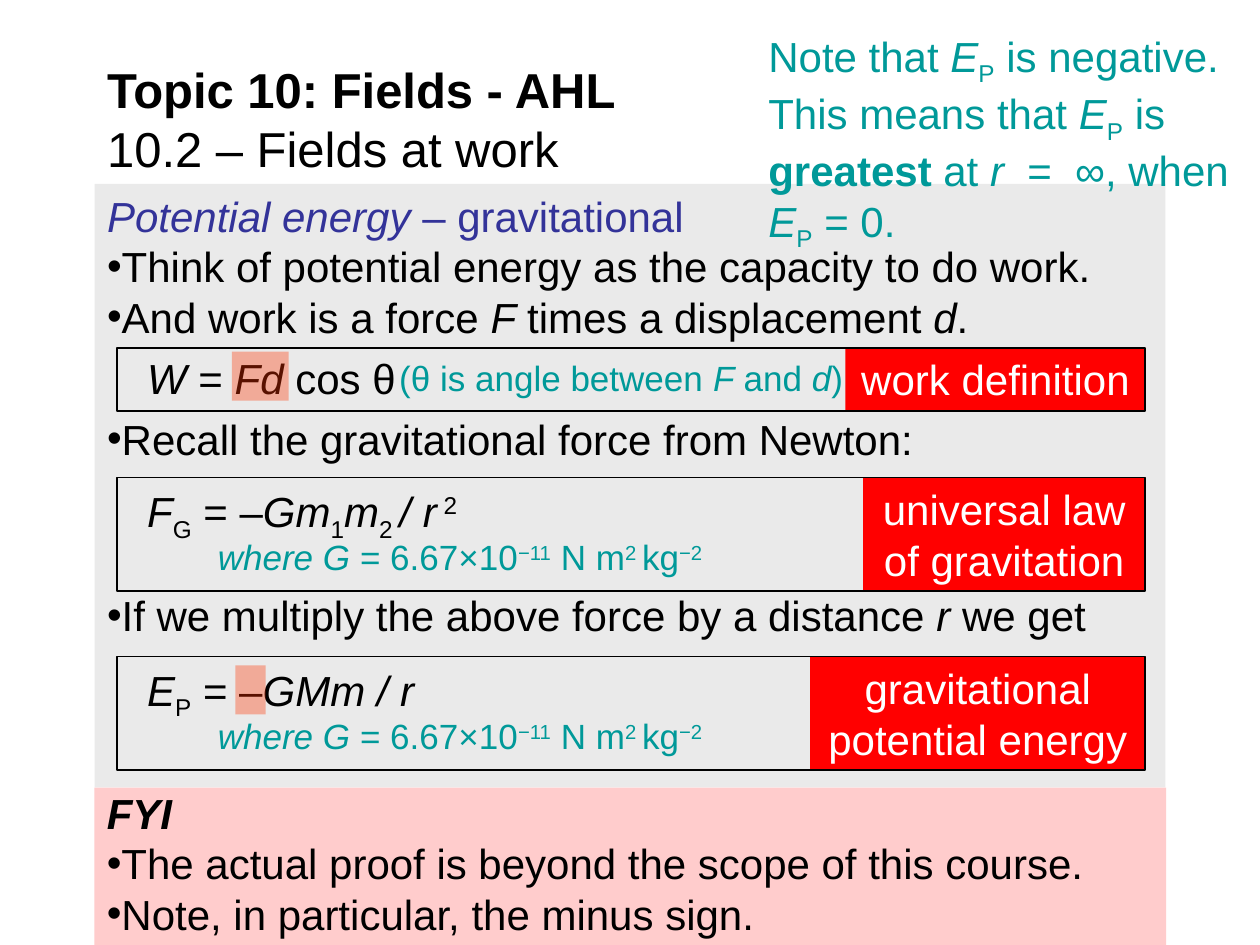
from lxml import etree
from pptx import Presentation
from pptx.dml.color import RGBColor
from pptx.enum.shapes import MSO_SHAPE
from pptx.enum.text import MSO_ANCHOR, MSO_AUTO_SIZE, PP_ALIGN
from pptx.oxml.ns import qn
from pptx.util import Pt

RECT = MSO_SHAPE.RECTANGLE
TOP, MIDDLE = MSO_ANCHOR.TOP, MSO_ANCHOR.MIDDLE
LEFT, CENTER, RIGHT = PP_ALIGN.LEFT, PP_ALIGN.CENTER, PP_ALIGN.RIGHT
NO_FIT = MSO_AUTO_SIZE.NONE

COLORS = {
    "ink": "000000", "heading": "333399", "note": "009999", "white": "FFFFFF",
    "panel": "EAEAEA", "fyi": "FFCCCC", "label": "FF0000", "highlight": "FF3300",
}
BASELINES = {"sub": "-25000", "sup": "30000"}

# A line is a list of (text, style) runs; styles: b, i, bi, sub, sup or "".
TITLE = [[("Topic 10: Fields - AHL", "b"), ("\v", ""), ("10.2 – Fields at work", "")]]
HEADING = [("Potential energy ", "i"), ("– gravitational", "")]
# Each point with the space before it, which makes room for the formula boxes
POINTS = [
    (0, [("Think of potential energy as the capacity to do work.", "")]),
    (0, [("And work is a force ", ""), ("F ", "i"), ("times a displacement ", ""),
         ("d", "i"), (".", "")]),
    (41, [("Recall the gravitational force from Newton:", "")]),
    (72, [("If we multiply the above force by a distance ", ""), ("r", "i"),
          (" we get", "")]),
]
FYI_HEADING = [("FYI", "bi")]
FYI_POINTS = [
    [("The actual proof is beyond the scope of this course.", "")],
    [("Note, in particular, the minus sign.", "")],
]
EP = [("E", "i"), ("P", "sub")]
SIGN_NOTE = [("Note that ", ""), *EP, (" is negative. This means that ", ""), *EP,
             (" is ", ""), ("greatest ", "b"), ("at ", ""), ("r", "i"),
             ("  =  ∞, when ", ""), *EP, (" = 0.", "")]
ANGLE = [("(θ is angle between ", ""), ("F ", "i"), ("and ", ""), ("d", "i"), (")", "")]
CONSTANT = [("where G", "i"), (" = 6.67×10", ""), ("−11", "sup"), (" N m", ""),
            ("2 ", "sup"), ("kg", ""), ("−2", "sup")]
# Remark: runs, left, offset from the frame top, width, alignment
ANGLE_REMARK = (ANGLE, 185.8, 4.3, 303, RIGHT)
CONSTANT_REMARK = (CONSTANT, 117.4, 32.4, 379.4, LEFT)
FORMULAS = [
    dict(top=198.7, height=36, label="work definition", label_width=171.4,
         formula=[("W", "i"), (" = ", ""), ("Fd ", "i"), ("cos θ", "")],
         formula_offset=2.2, remark=ANGLE_REMARK),
    dict(top=272.9, height=64.8, label="universal law of gravitation", label_width=161.3,
         formula=[("F", "i"), ("G", "sub"), (" = –", ""), ("Gm", "i"), ("1", "sub"),
                  ("m", "i"), ("2 ", "sub"), ("/ r", "i"), (" 2", "sup")],
         formula_offset=1.4, remark=CONSTANT_REMARK),
    dict(top=375.1, height=64.8, label="gravitational potential energy", label_width=191.5,
         formula=[*EP, (" = –", ""), ("GMm / r", "i")],
         formula_offset=1.4, remark=CONSTANT_REMARK),
]
HIGHLIGHTS = [(132.5, 200.9, 32.4, 28.1), (134.6, 380.2, 17.3, 28.1)]
FRAME_LEFT, FRAME_WIDTH = 67, 587.5


def rgb(name):
    return RGBColor.from_string(COLORS[name])


def add_runs(paragraph, runs, size, color):
    for text, style in runs:
        if text == "\v":
            paragraph.add_line_break()
            continue
        run = paragraph.add_run()
        run.text = text
        font = run.font
        font.name, font.size, font.color.rgb = "Arial", Pt(size), rgb(color)
        script = BASELINES.get(style)
        font.bold = not script and "b" in style
        font.italic = not script and "i" in style
        if script:
            run._r.get_or_add_rPr().set("baseline", script)


def set_bullet(paragraph, bulleted):
    """Put the bullet, if any, right against the text."""
    props = paragraph._p.get_or_add_pPr()
    props.set("marL", "0")
    props.set("indent", "0")
    if bulleted:
        etree.SubElement(props, qn("a:buFont")).set("typeface", "Arial")
        etree.SubElement(props, qn("a:buChar")).set("char", "•")
    else:
        etree.SubElement(props, qn("a:buNone"))


def write(shape, lines, size=24, color="ink", align=LEFT, anchor=TOP):
    """Fill a shape with lines of runs and return their paragraphs."""
    frame = shape.text_frame
    frame.word_wrap, frame.auto_size, frame.vertical_anchor = True, NO_FIT, anchor
    paragraphs = []
    for index, runs in enumerate(lines):
        paragraph = frame.add_paragraph() if index else frame.paragraphs[0]
        paragraph.alignment, paragraph.line_spacing = align, 1.0
        paragraph.space_before = paragraph.space_after = Pt(0)
        add_runs(paragraph, runs, size, color)
        paragraphs.append(paragraph)
    return paragraphs


def place(shape, left, top, width, height):
    shape.left, shape.top, shape.width, shape.height = map(Pt, (left, top, width, height))


def paint(shape, color):
    shape.fill.solid()
    shape.fill.fore_color.rgb = rgb(color)


def add_rect(slide, box, fill=None):
    rect = slide.shapes.add_shape(RECT, *map(Pt, box))
    rect.shadow.inherit = False
    if fill:
        paint(rect, fill)
        rect.line.fill.background()
    else:
        rect.fill.background()
        rect.line.color.rgb, rect.line.width = rgb("ink"), Pt(1)
    return rect


def add_text(slide, box, runs, size=24, color="ink", align=LEFT):
    return write(slide.shapes.add_textbox(*map(Pt, box)), [runs], size, color, align)[0]


def add_formula(slide, top, height, label, label_width, formula, formula_offset, remark):
    label_left = FRAME_LEFT + FRAME_WIDTH - label_width
    label_box = add_rect(slide, (label_left, top, label_width, height), "label")
    write(label_box, [[(label, "")]], color="white", align=CENTER)
    add_rect(slide, (FRAME_LEFT, top, FRAME_WIDTH, height))
    runs, left, offset, width, align = remark
    for paragraph, size in (
        (add_text(slide, (77, top + formula_offset, 218, 32), formula), 24),
        (add_text(slide, (left, top + offset, width, 26), runs, 20, "note", align), 20),
    ):
        paragraph.line_spacing, paragraph.space_before = 0.9, Pt(0.2 * size)


def main():
    deck = Presentation()
    deck.slide_width, deck.slide_height = Pt(720), Pt(540)
    slide = deck.slides.add_slide(deck.slide_layouts[1])
    title, body = slide.placeholders

    place(title, 54, 32.4, 612, 70.6)
    write(title, TITLE, size=28, anchor=MIDDLE)

    place(body, 54, 105.1, 612, 344.9)
    paint(body, "panel")
    heading, *points = write(body, [HEADING] + [runs for _, runs in POINTS])
    for run in heading.runs:
        run.font.color.rgb = rgb("heading")
    set_bullet(heading, False)
    for paragraph, (gap, _) in zip(points, POINTS):
        paragraph.space_before = Pt(gap)
        set_bullet(paragraph, True)

    fyi = add_rect(slide, (54, 450, 612.4, 90), "fyi")
    fyi_heading, *fyi_points = write(fyi, [FYI_HEADING, *FYI_POINTS])
    fyi.text_frame.margin_top = Pt(0)
    set_bullet(fyi_heading, False)
    for paragraph in fyi_points:
        set_bullet(paragraph, True)

    for formula in FORMULAS:
        add_formula(slide, **formula)
    add_text(slide, (432, 13.7, 288, 123.8), SIGN_NOTE, color="note")
    for box in HIGHLIGHTS:
        highlight = add_rect(slide, box, "highlight")
        color = highlight.fill._xPr.find(qn("a:solidFill"))[0]
        etree.SubElement(color, qn("a:alpha")).set("val", "35000")

    deck.save("out.pptx")


if __name__ == "__main__":
    main()
